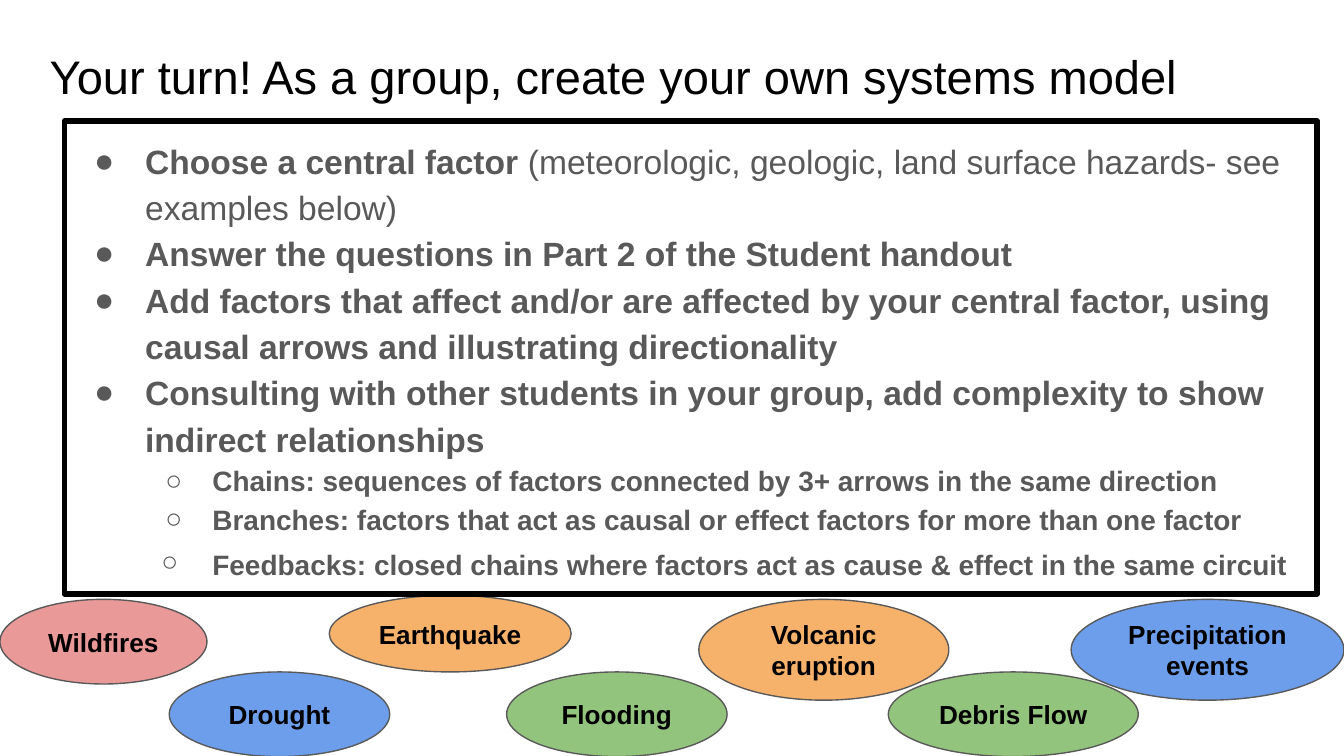
from dataclasses import dataclass

from lxml.etree import SubElement
from pptx import Presentation
from pptx.dml.color import RGBColor
from pptx.enum.shapes import MSO_SHAPE as Shape
from pptx.enum.text import MSO_ANCHOR as Anchor, MSO_AUTO_SIZE as AutoSize, PP_ALIGN as Align
from pptx.oxml.ns import qn
from pptx.util import Inches, Pt


@dataclass(frozen=True)
class Theme:
    font: str = "Arial"
    black: str = "000000"
    gray: str = "595959"
    red: str = "EA9999"
    orange: str = "F6B26B"
    blue: str = "6D9EEB"
    green: str = "93C47D"
    title_size: float = 25.2
    step_size: float = 18
    detail_size: float = 15
    hazard_size: float = 14


THEME = Theme()
SLIDE_WIDTH = Inches(10)
SLIDE_HEIGHT = SLIDE_WIDTH * 9 // 16
TITLE = "Your turn! As a group, create your own systems model"
UPPER_ROW, LOWER_ROW = 4.46, 5

# label, fill, left, top, width, height
HAZARDS = [
    ("Flooding", THEME.green, 3.77, LOWER_ROW, 1.64, 0.63),
    ("Earthquake", THEME.orange, 2.45, 4.43, 1.8, 0.57),
    ("Precipitation events", THEME.blue, 7.97, UPPER_ROW, 2.03, 0.75),
    ("Debris Flow", THEME.green, 6.61, LOWER_ROW, 1.86, 0.63),
    ("Wildfires", THEME.red, 0, UPPER_ROW, 1.54, 0.63),
    ("Drought", THEME.blue, 1.26, LOWER_ROW, 1.64, 0.63),
    ("Volcanic eruption", THEME.orange, 5.2, UPPER_ROW, 1.86, 0.75),
]

# level, hanging indent, runs of (text, size, bold)
STEP, DETAIL = THEME.step_size, THEME.detail_size
INSTRUCTIONS = [
    (0, 0.38, [
        ("Choose a central factor ", STEP, True),
        ("(meteorologic, geologic, land surface hazards- see examples below)", STEP, False),
    ]),
    (0, 0.38, [("Answer the questions in Part 2 of the Student handout", STEP, True)]),
    (0, 0.38, [("Add factors that affect and/or are affected by your central factor, "
                "using causal arrows and illustrating directionality", STEP, True)]),
    (0, 0.38, [("Consulting with other students in your group, add complexity "
                "to show indirect relationships", STEP, True)]),
    (1, 0.35, [("Chains: sequences of factors connected by 3+ arrows "
                "in the same direction", DETAIL, True)]),
    (1, 0.35, [("Branches: factors that act as causal or effect factors "
                "for more than one factor", DETAIL, True)]),
    (1, 0.38, [
        ("Feedbacks: closed chains where factors act as cause & effect "
         "in the same circuit", DETAIL, True),
        (" ", STEP, True),
    ]),
]


def apply(target, values):
    for name, value in values.items():
        setattr(target, name, value)


def place(shape, left, top, width, height):
    apply(shape, {"left": Inches(left), "top": Inches(top),
                  "width": Inches(width), "height": Inches(height)})


def format_frame(frame, anchor):
    margins = dict.fromkeys(
        ("margin_left", "margin_top", "margin_right", "margin_bottom"), Inches(0.1))
    apply(frame, {**margins, "word_wrap": True,
                  "vertical_anchor": anchor, "auto_size": AutoSize.NONE})


def add_run(paragraph, text, size, color, bold):
    run = paragraph.add_run()
    run.text = text
    apply(run.font, {"name": THEME.font, "size": Pt(size), "bold": bold})
    run.font.color.rgb = RGBColor.from_string(color)


def outline(shape, color, width):
    shape.line.color.rgb = RGBColor.from_string(color)
    shape.line.width = Pt(width)


def set_bullet(paragraph, level, hanging):
    properties = paragraph._p.get_or_add_pPr()
    properties.set("marL", str(Inches(0.5 * (level + 1))))
    properties.set("indent", str(-Inches(hanging)))
    bullet_color = SubElement(properties, qn("a:buClr"))
    SubElement(bullet_color, qn("a:srgbClr"), val=THEME.gray)
    SubElement(properties, qn("a:buFont"), typeface=THEME.font)
    SubElement(properties, qn("a:buChar"), char="●○"[level])


def add_hazard(slide, label, fill, *box):
    hazard = slide.shapes.add_shape(Shape.OVAL, *map(Inches, box))
    hazard.shadow.inherit = False
    hazard.fill.solid()
    hazard.fill.fore_color.rgb = RGBColor.from_string(fill)
    outline(hazard, THEME.gray, 0.75)
    format_frame(hazard.text_frame, Anchor.MIDDLE)
    paragraph = hazard.text_frame.paragraphs[0]
    paragraph.alignment = Align.CENTER
    add_run(paragraph, label, THEME.hazard_size, THEME.black, True)


def fill_title(title):
    place(title, 0.27, 0.25, 9.32, 0.63)
    format_frame(title.text_frame, Anchor.TOP)
    paragraph = title.text_frame.paragraphs[0]
    paragraph.alignment = Align.LEFT
    add_run(paragraph, TITLE, THEME.title_size, THEME.black, False)


def fill_instructions(body):
    place(body, 0.48, 0.9, 9.32, 3.52)
    outline(body, THEME.black, 3)
    frame = body.text_frame
    format_frame(frame, Anchor.TOP)
    for index, (level, hanging, runs) in enumerate(INSTRUCTIONS):
        paragraph = frame.add_paragraph() if index else frame.paragraphs[0]
        set_bullet(paragraph, level, hanging)
        apply(paragraph, {"level": level, "line_spacing": 1.15,
                          "space_before": Pt(0), "space_after": Pt(0)})
        for text, size, bold in runs:
            add_run(paragraph, text, size, THEME.gray, bold)


def bring_to_front(slide, shape):
    slide.shapes._spTree.append(shape._element)


def main():
    deck = Presentation()
    apply(deck, {"slide_width": SLIDE_WIDTH, "slide_height": SLIDE_HEIGHT})
    slide = deck.slides.add_slide(deck.slide_layouts[1])
    title, body = slide.placeholders
    fill_title(title)
    fill_instructions(body)
    for hazard in HAZARDS:
        add_hazard(slide, *hazard)
    for placeholder in (title, body):
        bring_to_front(slide, placeholder)
    deck.save("out.pptx")


if __name__ == "__main__":
    main()
